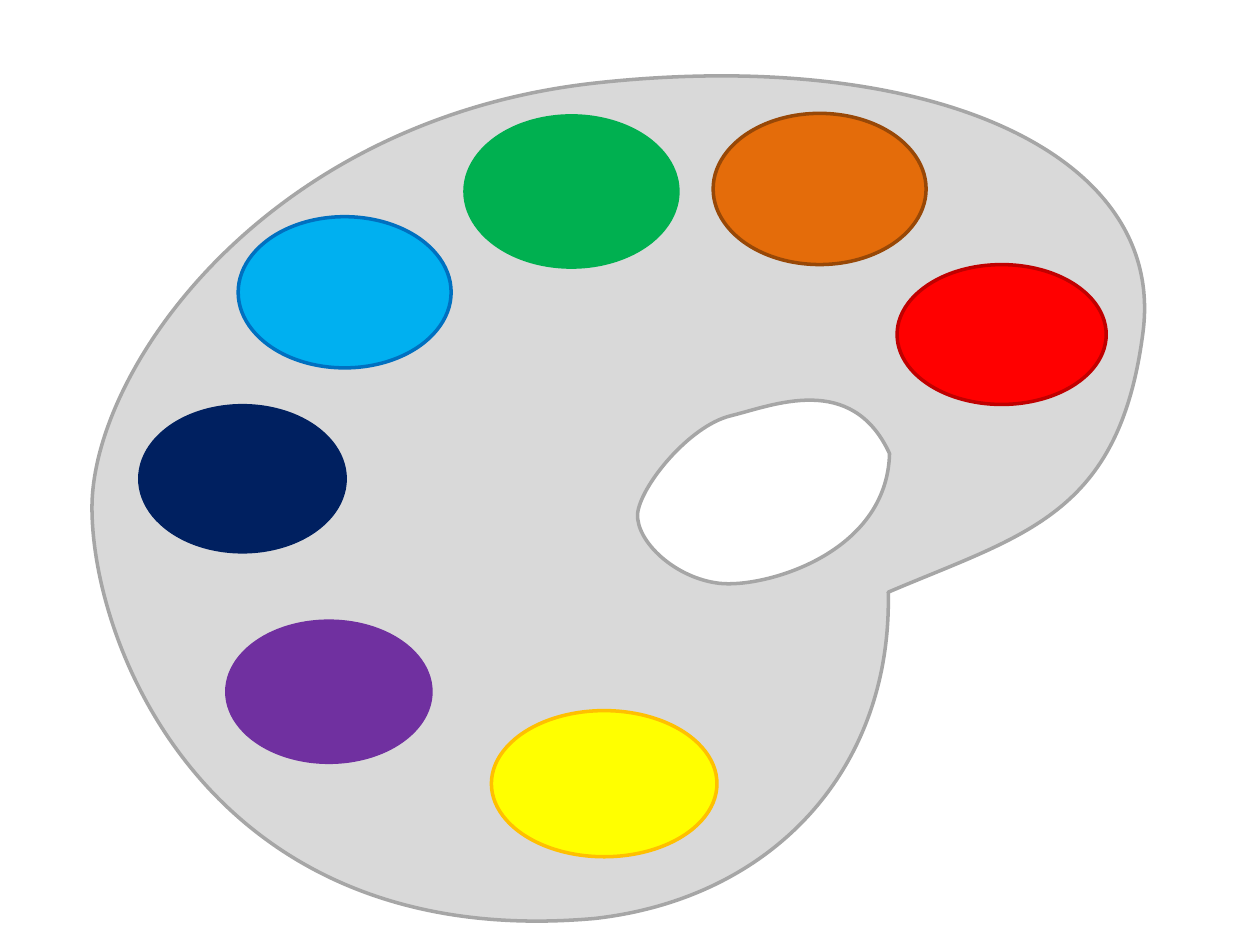
import lxml.etree
import pptx
import pptx.dml.color
import pptx.enum.shapes
import pptx.oxml.ns
import pptx.util

PX = 9144
BOARD = (73, 60, 835, 670)
EDGE = [
    (0, 343),
    (0, 233, 138, 35, 399, 6),
    (661, -23, 854, 60, 834, 205),
    (815, 349, 740, 364, 632, 410),
    (635, 550, 541, 653, 399, 669),
    (95, 696, 0, 454, 0, 343),
]
HOLE = [
    (433, 348),
    (432, 370, 463, 399, 498, 403),
    (533, 407, 631, 380, 633, 300),
    (603, 235, 540, 262, 507, 270),
    (474, 278, 435, 326, 433, 348),
]
PAINTS = [
    (639, 150, 166, 111, "FF0000", "C00000"),
    (296, 32, 169, 120, "00B050", "00B050"),
    (116, 112, 169, 120, "00B0F0", "0070C0"),
    (38, 262, 163, 116, "002060", "002060"),
    (493, 30, 169, 120, "E46C0A", "984807"),
    (317, 504, 179, 116, "FFFF00", "FFC000"),
    (107, 433, 162, 112, "7030A0", "7030A0"),
]


def color(code):
    """Turn a hex string into a colour."""
    return pptx.dml.color.RGBColor.from_string(code)


def style(shape, fill, line):
    """Give a shape a flat fill and an outline."""
    shape.shadow.inherit = False
    shape.fill.solid()
    shape.fill.fore_color.rgb = color(fill)
    shape.line.color.rgb = color(line)
    shape.line.width = pptx.util.Pt(2)


def add_step(path, tag, nums=()):
    """Append one drawing step to a path."""
    step = lxml.etree.SubElement(path, pptx.oxml.ns.qn(f"a:{tag}"))
    for x, y in zip(nums[::2], nums[1::2]):
        lxml.etree.SubElement(
            step, pptx.oxml.ns.qn("a:pt"), x=str(x * PX), y=str(y * PX)
        )


def add_board(shapes, box):
    """Draw the curved board with its thumb hole."""
    left, top, width, height = box
    pen = shapes.build_freeform(0, 0, scale=PX)
    pen.add_line_segments([(width, 0), (width, height), (0, height)])
    board = pen.convert_to_shape(left * PX, top * PX)
    path = next(board._element.iter(pptx.oxml.ns.qn("a:path")))
    for child in list(path):
        path.remove(child)
    path.set("w", str(width * PX))
    path.set("h", str(height * PX))
    for start, *curves in (EDGE, HOLE):
        add_step(path, "moveTo", start)
        for curve in curves:
            add_step(path, "cubicBezTo", curve)
        add_step(path, "close")
    style(board, "D9D9D9", "A6A6A6")


def add_paints(shapes, box):
    """Place the paint spots on the board."""
    left, top = box[:2]
    oval = pptx.enum.shapes.MSO_SHAPE.OVAL
    for x, y, width, height, fill, line in PAINTS:
        frame = (left + x, top + y, width, height)
        spot = shapes.add_shape(oval, *(n * PX for n in frame))
        style(spot, fill, line)


def main():
    """Build and save the palette slide."""
    deck = pptx.Presentation()
    deck.slide_width = 1000 * PX
    deck.slide_height = 750 * PX
    slide = deck.slides.add_slide(deck.slide_layouts[6])
    group = slide.shapes.add_group_shape()
    add_board(group.shapes, BOARD)
    add_paints(group.shapes, BOARD)
    deck.save("out.pptx")


if __name__ == "__main__":
    main()
